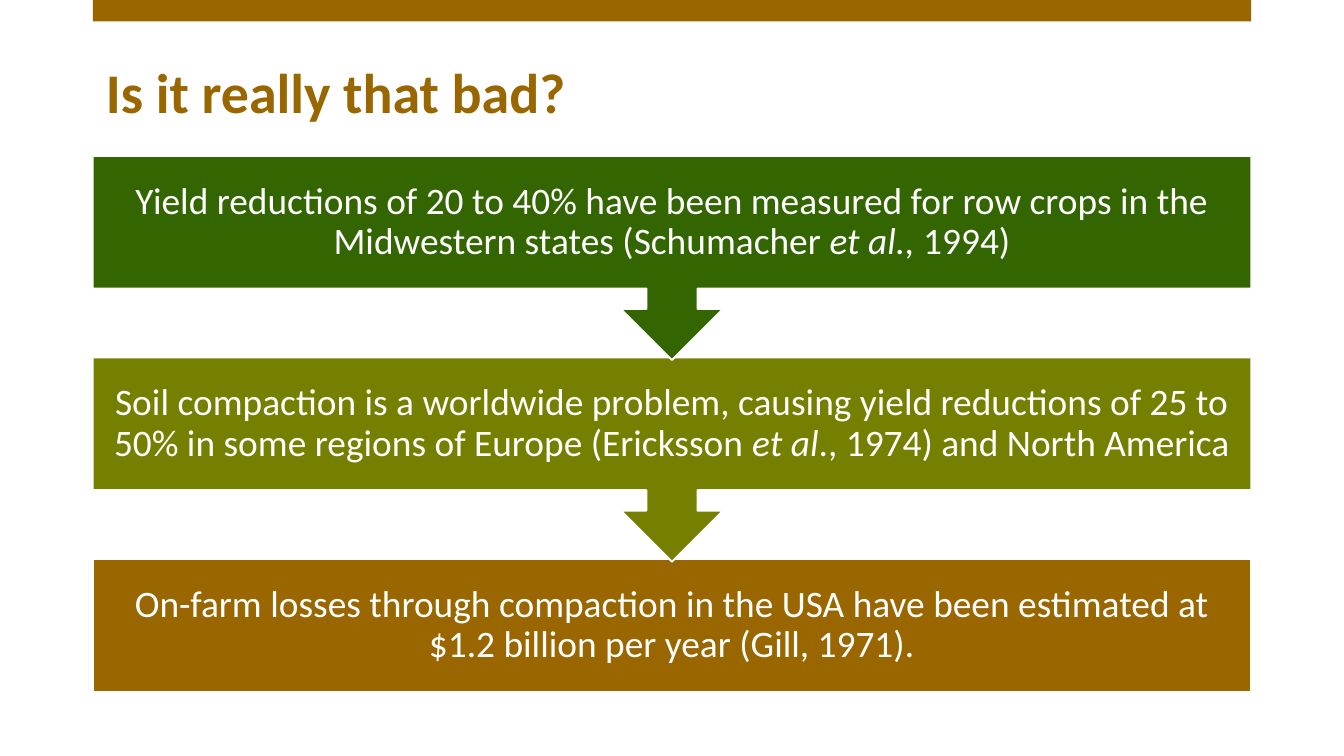
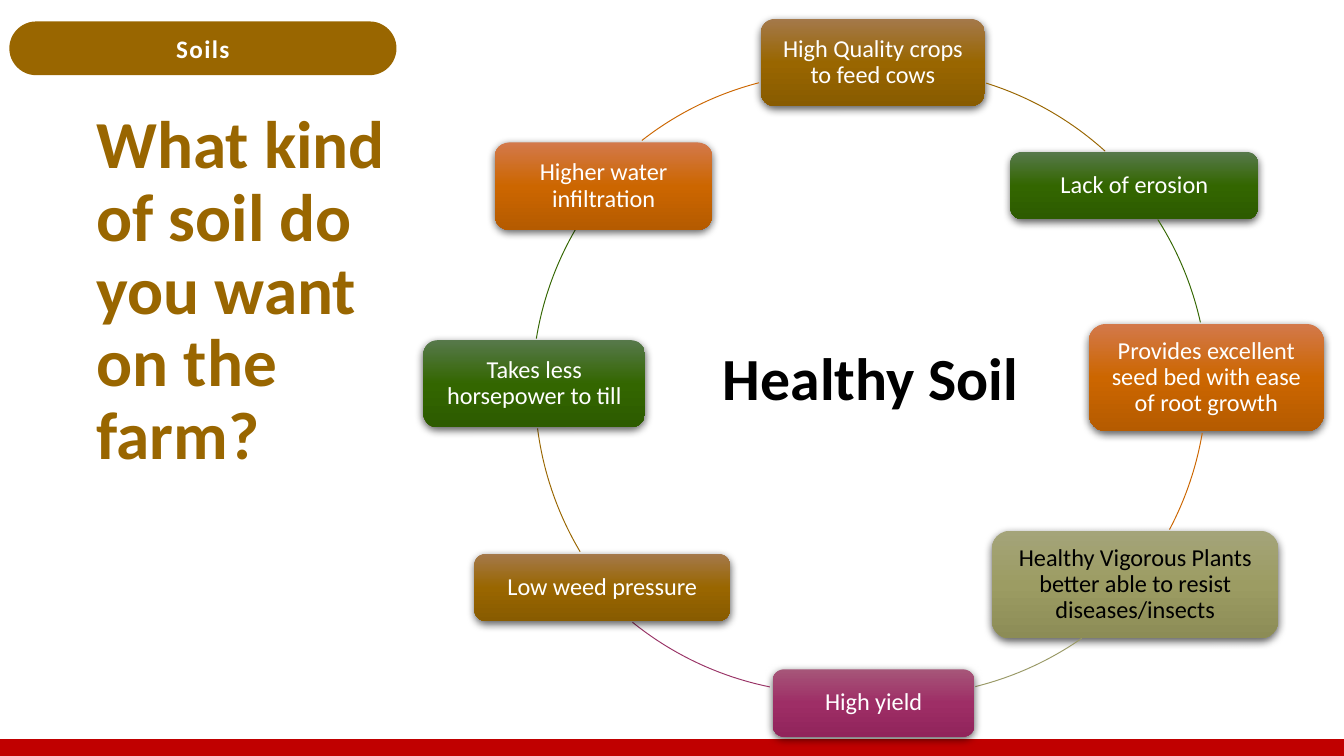
from collections import namedtuple
from copy import deepcopy
from dataclasses import dataclass

from lxml import etree
from pptx import Presentation
from pptx.dml.color import RGBColor
from pptx.enum.shapes import MSO_SHAPE
from pptx.enum.text import MSO_ANCHOR, PP_ALIGN
from pptx.oxml.ns import qn
from pptx.util import Pt

RECTANGLE = MSO_SHAPE.RECTANGLE
ROUNDED = MSO_SHAPE.ROUNDED_RECTANGLE
CALLOUT = MSO_SHAPE.DOWN_ARROW_CALLOUT
ARC = MSO_SHAPE.ARC
LEFT, CENTER = PP_ALIGN.LEFT, PP_ALIGN.CENTER
TOP, MIDDLE = MSO_ANCHOR.TOP, MSO_ANCHOR.MIDDLE

Box = namedtuple("Box", "left top width height")
Tint = namedtuple("Tint", "line stops text")
Node = namedtuple("Node", "label tint box")
Link = namedtuple("Link", "left top start end")


@dataclass(frozen=True)
class Theme:
    """Colours and type sizes of the presentation."""

    font: str = "Calibri"
    brown: str = "996600"
    green: str = "336600"
    olive: str = "758000"
    red: str = "C00000"
    white: str = "FFFFFF"
    black: str = "000000"
    title: float = 30
    side_title: float = 36
    center: float = 32
    step: float = 20
    node: float = 13
    label: float = 13.5
    leading: float = 0.9


THEME = Theme()
BROWN = Tint(THEME.brown, ("A4794B", "996600", "885B00"), THEME.white)
GREEN = Tint(THEME.green, ("57794B", "336600", "2D5B00"), THEME.white)
ORANGE = Tint("CC6600", ("D3794B", "CC6600", "B55B00"), THEME.white)
SAGE = Tint("999966", ("A4A479", "9C9C63", "8C8C56"), THEME.black)
PLUM = Tint("993366", ("A65679", "9E2E66", "91245B"), THEME.white)

SLIDE_WIDTH, SLIDE_HEIGHT = 720, 405
CONTENT_LEFT, CONTENT_WIDTH = 49.7, 620.6
STEP_PITCH, STEP_HEIGHT, CALLOUT_HEIGHT = 108, 71.3, 109.4
RING_DIAMETER = 343.4

STEPS = [
    (THEME.green, [
        ("Yield reductions of 20 to 40% have been measured for row crops "
         "in the Midwestern states (Schumacher ", False),
        ("et al.,", True),
        (" 1994)", False),
    ]),
    (THEME.olive, [
        ("Soil compaction is a worldwide problem, causing yield reductions "
         "of 25 to 50% in some regions of Europe (Ericksson ", False),
        ("et al", True),
        ("., 1974) and North America", False),
    ]),
    (THEME.brown, [
        ("On-farm losses through compaction in the USA have been estimated "
         "at $1.2 billion per year (Gill, 1971).", False),
    ]),
]

NODES = [
    Node("High Quality crops to feed cows", BROWN, Box(180.7, 0, 120.2, 46.8)),
    Node("Lack of erosion", GREEN, Box(314.6, 71.3, 132.5, 36)),
    Node("Provides excellent seed bed with ease of root growth", ORANGE,
         Box(356.4, 163.4, 126, 57.6)),
    Node("Healthy Vigorous Plants better able to resist diseases/insects", SAGE,
         Box(304.6, 274.3, 153.4, 57.6)),
    Node("High yield", PLUM, Box(187.2, 348.5, 108, 36)),
    Node("Low weed pressure", BROWN, Box(27.4, 286.6, 136.8, 36)),
    Node("Takes less horsepower to till", GREEN, Box(0, 172.1, 118.8, 46.8)),
    Node("Higher water infiltration", ORANGE, Box(38.2, 66.2, 116.6, 46.8)),
]

LINKS = [
    Link(78.5, 26.6, 287.4, 312.1),
    Link(77, 28.1, 327.5, 347.5),
    Link(76.3, 21.6, 9.6, 27.9),
    Link(82.8, 19.4, 55.1, 76.1),
    Link(48.2, 18, 101.5, 128.9),
    Link(59.8, 25.9, 149.2, 172.7),
    Link(58.3, 27.4, 189.3, 210.1),
    Link(51.1, 28.8, 232, 255.5),
]


def rgb(code):
    """Turn a hexadecimal code into a colour."""
    return RGBColor.from_string(code)


def inside(outer, inner):
    """Move a box from relative to absolute coordinates."""
    return inner._replace(left=outer.left + inner.left, top=outer.top + inner.top)


def add_shape(slide, kind, box, fill=None, line=None, line_width=1):
    """Add a flat preset shape without a shadow."""
    shape = slide.shapes.add_shape(kind, *map(Pt, box))
    shape.shadow.inherit = False
    if fill:
        shape.fill.solid()
        shape.fill.fore_color.rgb = rgb(fill)
    else:
        shape.fill.background()
    if line:
        shape.line.color.rgb = rgb(line)
        shape.line.width = Pt(line_width)
    else:
        shape.line.fill.background()
    return shape


def write(shape, runs, size, color, bold=False, align=CENTER, anchor=MIDDLE,
          insets=(7.2, 3.6), leading=THEME.leading, spacing=None):
    """Write one paragraph of (text, italic) runs into a shape."""
    frame = shape.text_frame
    frame.word_wrap = True
    frame.vertical_anchor = anchor
    frame.margin_left = frame.margin_right = Pt(insets[0])
    frame.margin_top = frame.margin_bottom = Pt(insets[1])
    paragraph = frame.paragraphs[0]
    paragraph.alignment = align
    paragraph.line_spacing = leading
    for text, italic in runs:
        run = paragraph.add_run()
        run.text = text
        run.font.name = THEME.font
        run.font.size = Pt(size)
        run.font.bold = bold
        run.font.italic = italic
        run.font.color.rgb = rgb(color)
        if spacing:
            run.font._element.set("spc", str(round(spacing * 100)))


def add_heading(slide, box, text, size, color=THEME.brown, anchor=MIDDLE):
    """Add bold left-aligned text in a box."""
    heading = slide.shapes.add_textbox(*map(Pt, box))
    write(heading, [(text, False)], size, color, bold=True, align=LEFT, anchor=anchor)


def add_section_label(slide, box, text):
    """Add the pill that names the section."""
    pill = add_shape(slide, ROUNDED, box, THEME.brown)
    pill.adjustments[0] = 0.5
    write(pill, [(text, False)], THEME.label, THEME.white, bold=True,
          leading=1, spacing=0.8)


def add_steps(slide, box, steps):
    """Stack the steps, each pointing down to the next, the last one plain."""
    last = len(steps) - 1
    for index, (color, runs) in reversed(list(enumerate(steps))):
        kind, height = (RECTANGLE, STEP_HEIGHT) if index == last else (CALLOUT, CALLOUT_HEIGHT)
        place = inside(box, Box(0, index * STEP_PITCH, box.width, height))
        step = add_shape(slide, kind, place, color, THEME.white)
        write(step, runs, THEME.step, THEME.white, insets=(11, 11))


def shade(shape, colors):
    """Fill a shape from top to bottom through three colours."""
    shape.fill.gradient()
    shape.fill.gradient_angle = 270
    first = shape._element.spPr.find(f"{qn('a:gradFill')}/{qn('a:gsLst')}")[0]
    first.addnext(deepcopy(first))
    for stop, position, color in zip(shape.fill.gradient_stops, (0, 0.5, 1), colors):
        stop.position = position
        stop.color.rgb = rgb(color)


def cast_shadow(shape):
    """Give a shape a soft shadow below it."""
    effects = shape._element.spPr.find(qn("a:effectLst"))
    shadow = etree.SubElement(effects, qn("a:outerShdw"), blurRad=str(Pt(4.5)),
                              dist=str(Pt(1.5)), dir="5400000", rotWithShape="0")
    color = etree.SubElement(shadow, qn("a:srgbClr"), val=THEME.black)
    etree.SubElement(color, qn("a:alpha"), val="63000")


def add_node(slide, box, node):
    """Add one shaded box of the ring."""
    shape = add_shape(slide, ROUNDED, box)
    shade(shape, node.tint.stops)
    cast_shadow(shape)
    write(shape, [(node.label, False)], THEME.node, node.tint.text, insets=(5, 3.6))


def add_ring(slide, box, nodes, links, center):
    """Add the nodes, the arcs between them and the text in the middle."""
    for node, link in zip(nodes, links):
        add_node(slide, inside(box, node.box), node)
        circle = Box(link.left, link.top, RING_DIAMETER, RING_DIAMETER)
        arc = add_shape(slide, ARC, inside(box, circle),
                        line=node.tint.line, line_width=0.5)
        for index, degrees in enumerate((link.start, link.end)):
            arc.adjustments[index] = degrees * 0.6
    add_heading(slide, inside(box, Box(153.4, 173.5, 180, 55.4)), center,
                THEME.center, THEME.black, TOP)


def build_steps_slide(slide, page):
    """Build the slide with a top band, a title and three steps."""
    content = Box(page.left + CONTENT_LEFT, page.top, CONTENT_WIDTH, page.height)
    add_heading(slide, inside(content, Box(0, 19.4, content.width, 63.4)),
                "Is it really that bad?", THEME.title)
    add_shape(slide, RECTANGLE, content._replace(height=11.5), THEME.brown)
    add_steps(slide, inside(content, Box(0, 83.5, content.width, 287.3)), STEPS)


def build_ring_slide(slide, page):
    """Build the slide with a side title and a ring of benefits."""
    add_shape(slide, RECTANGLE, inside(page, Box(0, page.height - 9, page.width, 9)),
              THEME.red)
    add_section_label(slide, inside(page, Box(5, 11.5, 207.4, 28.8)), "Soils")
    add_ring(slide, inside(page, Box(226.8, 10.1, 482.4, 384.5)), NODES, LINKS,
             "Healthy Soil")
    add_heading(slide, inside(page, Box(44.6, 129.6, 198, 54)),
                "What kind of soil do you want on the farm?", THEME.side_title)


def main():
    """Build and save the presentation."""
    presentation = Presentation()
    presentation.slide_width = Pt(SLIDE_WIDTH)
    presentation.slide_height = Pt(SLIDE_HEIGHT)
    page = Box(0, 0, SLIDE_WIDTH, SLIDE_HEIGHT)
    for build in (build_steps_slide, build_ring_slide):
        build(presentation.slides.add_slide(presentation.slide_layouts[6]), page)
    presentation.save("out.pptx")


if __name__ == "__main__":
    main()
